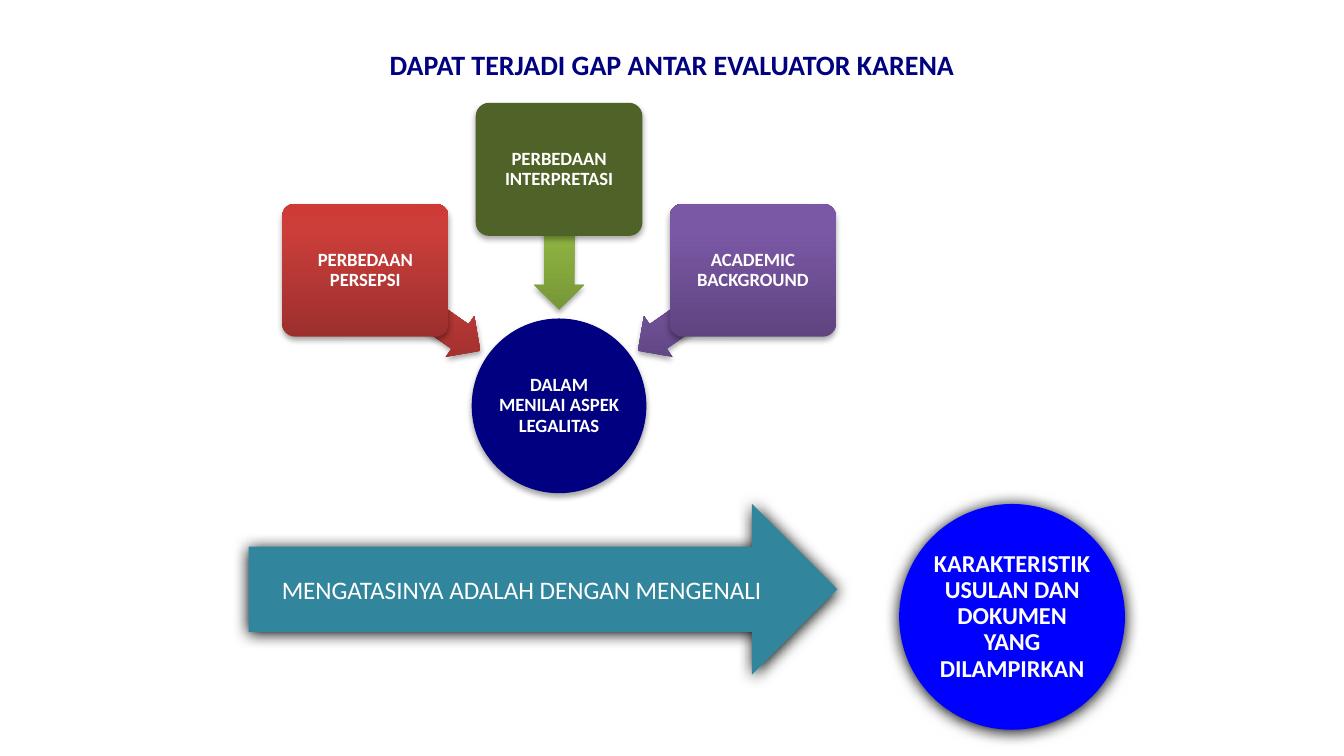
from math import cos, radians, sin

from pptx import Presentation
from pptx.dml.color import RGBColor
from pptx.enum.shapes import MSO_SHAPE as Kind
from pptx.enum.text import MSO_ANCHOR as Anchor, PP_ALIGN as Align
from pptx.oxml import parse_xml
from pptx.oxml.ns import nsdecls, qn
from pptx.util import Inches, Pt

THEME = {
    "font": "Calibri",
    "white": "FFFFFF", "navy": "000080", "blue": "0000FF",
    "teal": "31859C", "olive": "4F6228",
    "red": ("9C2F2D", "CB3E3A", "CE3B37"),
    "green": ("779737", "9BC348", "9DC746"),
    "purple": ("5F4480", "7B58A6", "7C57A8"),
    "title": 15, "small": 10, "action": 13.5, "goal": 13,
}
# blur, distance (points), opacity (percent)
SOFT, DEEP = (3.1, 1.8, 35), (8.5, 1, 100)

TITLE = "DAPAT TERJADI GAP ANTAR EVALUATOR KARENA"
HUB = "DALAM MENILAI ASPEK LEGALITAS"
ACTION = "MENGATASINYA ADALAH DENGAN MENGENALI"
GOAL = "KARAKTERISTIK USULAN DAN DOKUMEN YANG DILAMPIRKAN"
# text, angle around the hub, arrow colour, box colour
CAUSES = [
    ("PERBEDAAN PERSEPSI", 215, "red", "red"),
    ("PERBEDAAN INTERPRETASI", 270, "green", "olive"),
    ("ACADEMIC BACKGROUND", 325, "purple", "purple"),
]

WIDE = 10
HIGH = WIDE * 9 / 16
HUB_X, HUB_Y, HUB_D = 4.16, 3.02, 1.3
ARROW_R, ARROW_W, ARROW_H = 1.24, 1.05, 0.37
BOX_R, BOX_W, BOX_H = 1.76, 1.24, 0.99
ROW_Y = 3.75


def paint(shape, tone):
    """Fill with one colour, or with a tuple as a gradient rising from the bottom."""
    shape.fill.solid()
    if isinstance(tone, str):
        shape.fill.fore_color.rgb = RGBColor.from_string(tone)
        return
    stops = "".join(
        f'<a:gs pos="{pos}"><a:srgbClr val="{hue}"/></a:gs>'
        for pos, hue in zip((0, 80000, 100000), tone))
    grad = parse_xml(
        f'<a:gradFill {nsdecls("a")} rotWithShape="0"><a:gsLst>{stops}</a:gsLst>'
        '<a:lin ang="16200000" scaled="0"/></a:gradFill>')
    props = shape._element.spPr
    props.replace(props.find(qn("a:solidFill")), grad)


def shade(shape, blur, dist, alpha):
    shape.shadow.inherit = False
    shape._element.spPr.find(qn("a:effectLst")).append(parse_xml(
        f'<a:outerShdw {nsdecls("a")} blurRad="{Pt(blur)}" dist="{Pt(dist)}" '
        'dir="5400000" rotWithShape="0"><a:srgbClr val="000000">'
        f'<a:alpha val="{alpha * 1000}"/></a:srgbClr></a:outerShdw>'))


def write(shape, text, size, hue="white", bold=True, inset=None, space=None):
    frame = shape.text_frame
    frame.word_wrap = True
    frame.vertical_anchor = Anchor.MIDDLE
    if inset is not None:
        for side in ("left", "top", "right", "bottom"):
            setattr(frame, f"margin_{side}", Inches(inset))
    para = frame.paragraphs[0]
    para.alignment = Align.CENTER
    para.line_spacing = space
    run = para.add_run()
    run.text = text
    style = {"name": THEME["font"], "size": Pt(THEME[size]), "bold": bold}
    for key, value in style.items():
        setattr(run.font, key, value)
    run.font.color.rgb = RGBColor.from_string(THEME[hue])


def draw(slide, kind, box, hue, shadow=SOFT, adjust=(), turn=0):
    shape = slide.shapes.add_shape(kind, *map(Inches, box))
    for i, value in enumerate(adjust):
        shape.adjustments[i] = value
    shape.rotation = turn
    paint(shape, THEME[hue])
    shape.line.fill.background()
    shade(shape, *shadow)
    return shape


def orbit(angle, radius, wide, high):
    """Box of the given size, centred at an angle and radius from the hub."""
    x = HUB_X + radius * cos(radians(angle))
    y = HUB_Y + radius * sin(radians(angle))
    return x - wide / 2, y - high / 2, wide, high


def main():
    deck = Presentation()
    deck.slide_width, deck.slide_height = Inches(WIDE), Inches(HIGH)
    slide = deck.slides.add_slide(deck.slide_layouts[6])

    hub = draw(slide, Kind.OVAL, orbit(0, 0, HUB_D, HUB_D), "navy")
    write(hub, HUB, "small", inset=0.01, space=0.9)

    for text, angle, arrow, fill in CAUSES:
        draw(slide, Kind.LEFT_ARROW, orbit(angle, ARROW_R, ARROW_W, ARROW_H),
             arrow, adjust=(0.6, 0.5), turn=angle)
        card = draw(slide, Kind.ROUNDED_RECTANGLE,
                    orbit(angle, BOX_R, BOX_W, BOX_H), fill, adjust=(0.1,))
        write(card, text, "small", inset=0.02, space=0.9)

    title = slide.shapes.add_textbox(*map(Inches, (1.74, 0.3, 6.52, 0.35)))
    write(title, TITLE, "title", hue="navy")

    action = draw(slide, Kind.RIGHT_ARROW, (1.85, ROW_Y, 4.38, 1.27), "teal", DEEP)
    write(action, ACTION, "action", bold=False)
    goal = draw(slide, Kind.OVAL, (6.69, ROW_Y, 1.68, 1.68), "blue", DEEP)
    write(goal, GOAL, "goal", inset=0.01, space=0.9)

    deck.save("out.pptx")


if __name__ == "__main__":
    main()
